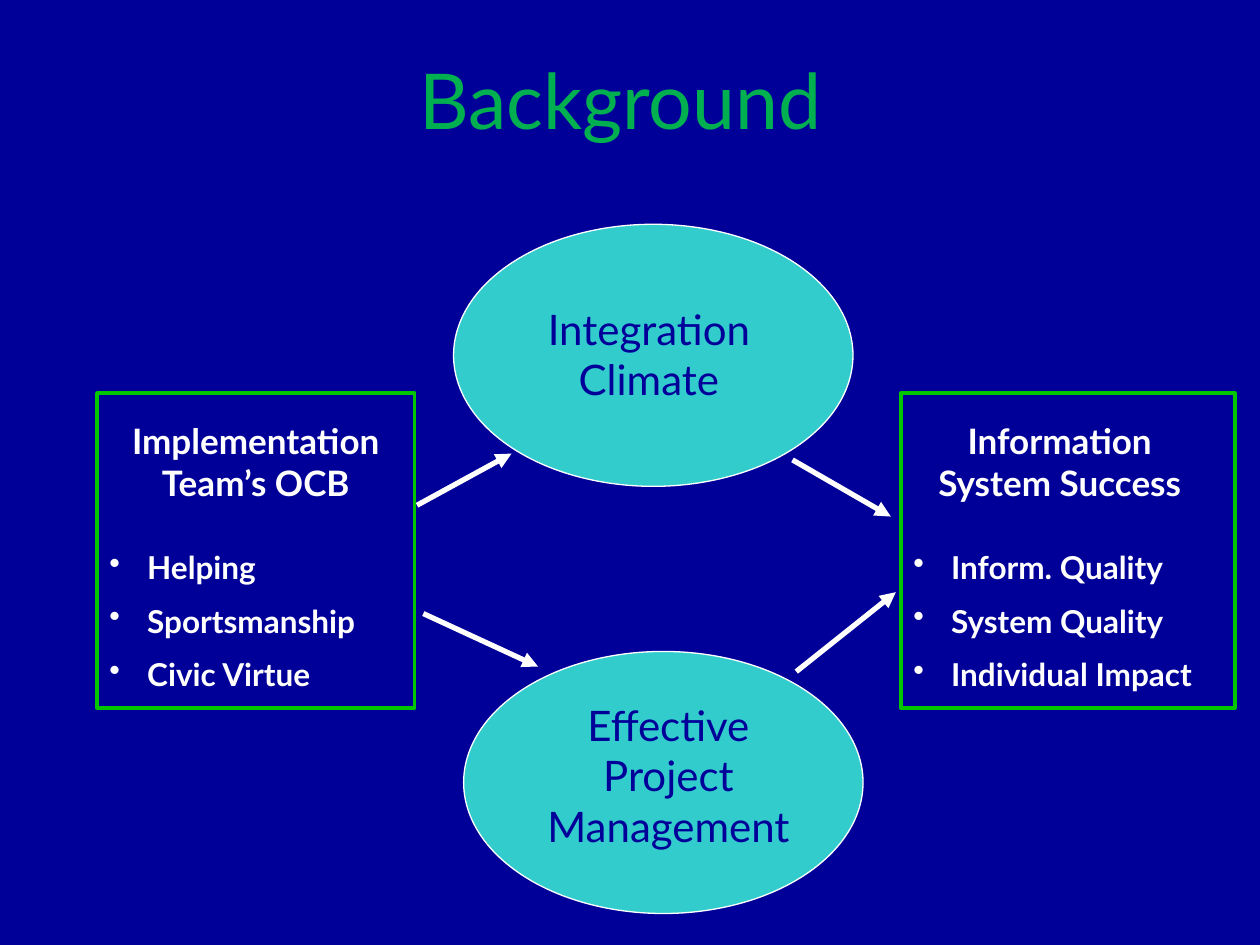
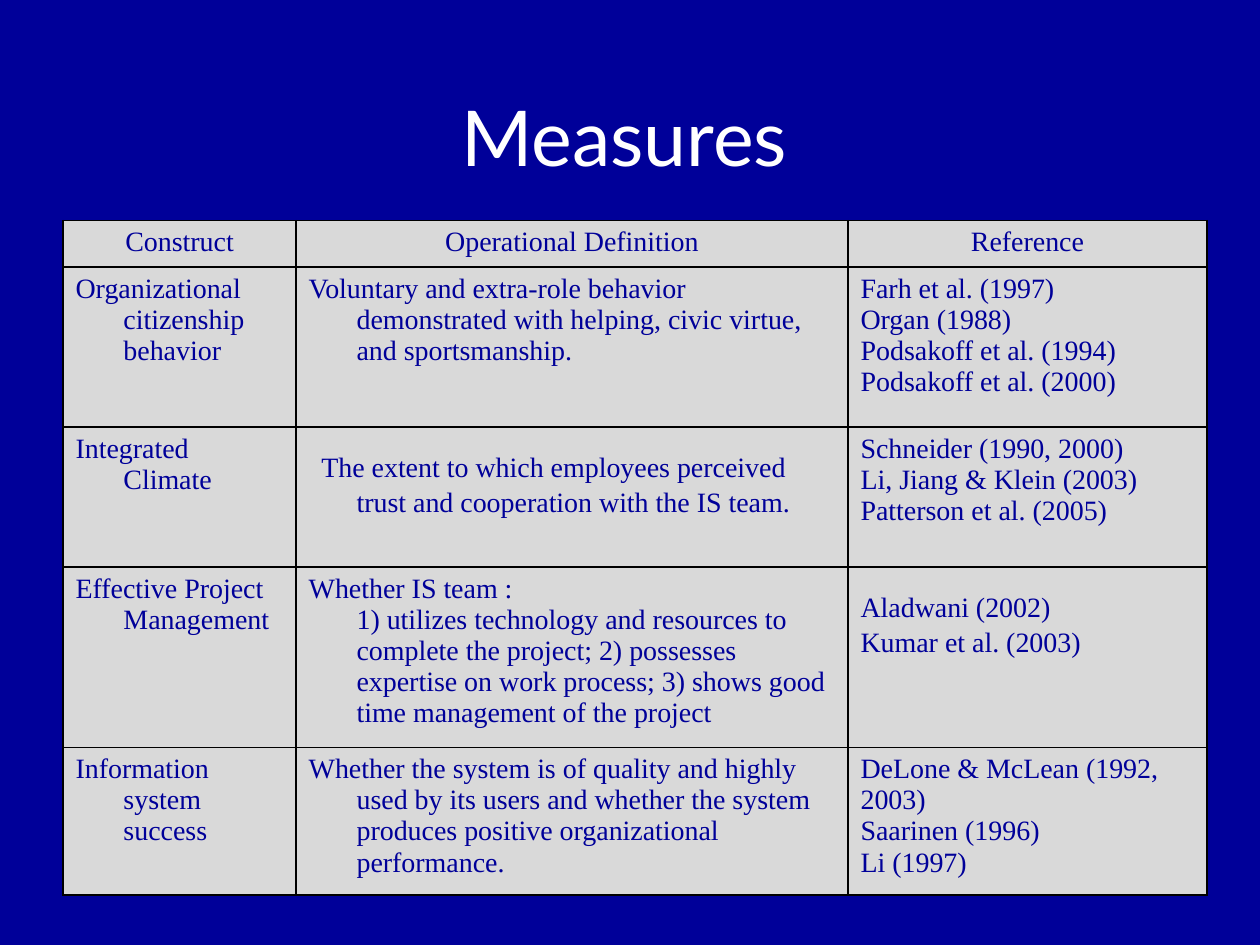
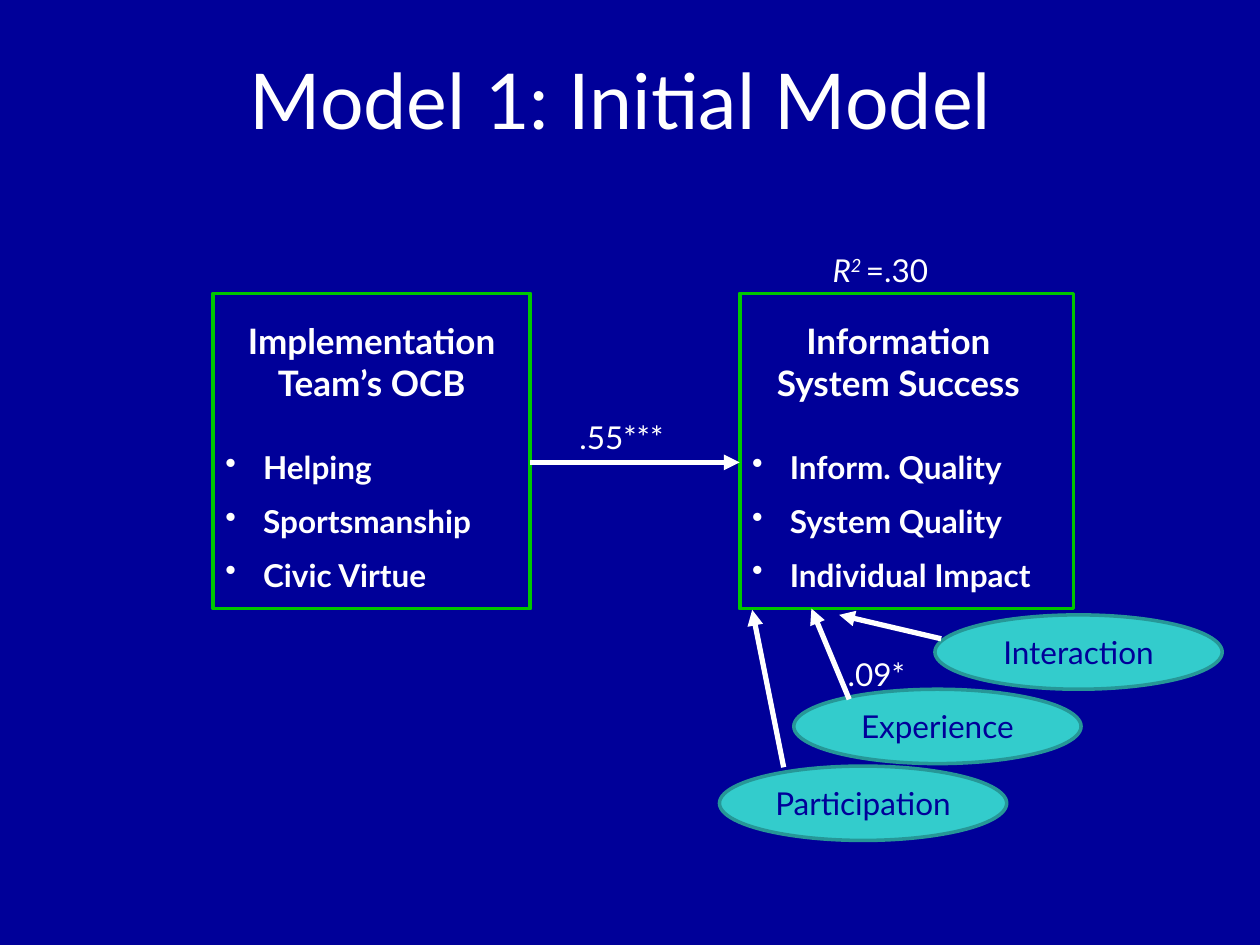
"""Build three slides on team citizenship behavior and system success."""
from lxml.etree import SubElement as Sub
from pptx import Presentation
from pptx.dml.color import RGBColor as RGB
from pptx.enum.shapes import MSO_CONNECTOR as Link, MSO_SHAPE as Kind
from pptx.enum.text import MSO_ANCHOR as Anchor, PP_ALIGN as Align
from pptx.oxml.ns import qn
from pptx.util import Inches, Pt


class Theme:
    navy = RGB.from_string("000099")
    white = RGB.from_string("FFFFFF")
    black = RGB.from_string("000000")
    green = RGB.from_string("00B050")
    lime = RGB.from_string("00C600")
    aqua = RGB.from_string("33CCCC")
    teal = RGB.from_string("269797")
    gray = RGB.from_string("D9D9D9")
    sans, serif = "Lato", "Times New Roman"
    title, large, head, body, cell = 44, 24, 20, 18, 16


def write(frame, lines, size, color=Theme.white, face=Theme.sans, align=Align.LEFT,
          bold=False, left=0, first=0, bullet=None, gap=0):
    frame.word_wrap = True
    for n, line in enumerate(lines):
        para = frame.add_paragraph() if n else frame.paragraphs[0]
        para.text = line
        para.alignment = align
        props = para._p.get_or_add_pPr()
        props.set("marL", str(Inches(left)))
        props.set("indent", str(Inches(first)))
        if bullet:
            Sub(props, qn("a:buChar"), char=bullet)
        if n and gap:
            para.space_before = Pt(gap)
        font = para.font
        font.name, font.size, font.bold = face, Pt(size), bold
        font.color.rgb = color


def put(page, at, kind=None, fill=None, line=None, width=1):
    place = [Inches(v) for v in at]
    if kind is None:
        return page.shapes.add_textbox(*place).text_frame
    shape = page.shapes.add_shape(kind, *place)
    shape.shadow.inherit = False
    if fill is None:
        shape.fill.background()
    else:
        shape.fill.solid()
        shape.fill.fore_color.rgb = fill
    shape.line.color.rgb = line
    shape.line.width = Pt(width)
    return shape.text_frame


deck = Presentation()
deck.slide_width, deck.slide_height = Inches(10), Inches(7.5)

pages = []
for title, color, at in (
    ("Background", Theme.green, (0.83, 0, 8.19, 1.57)),
    ("Measures", Theme.white, (0.5, 0.32, 8.91, 1.51)),
    ("Model 1: Initial Model", Theme.white, (0.83, 0, 8.19, 1.57)),
):
    page = deck.slides.add_slide(deck.slide_layouts[6])
    page.background.fill.solid()
    page.background.fill.fore_color.rgb = Theme.navy
    frame = put(page, at)
    frame.vertical_anchor = Anchor.MIDDLE
    write(frame, [title], Theme.title, color, align=Align.CENTER)
    pages.append(page)
intro, grid, model = pages

team = ("Implementation Team’s OCB", 2.52, ["Helping", "Sportsmanship", "Civic Virtue"])
gain = ("Information System Success", 2.65,
        ["Inform. Quality", "System Quality", "Individual Impact"])
for page, x, y, (head, wide, items) in (
    (intro, 0.77, 3.12, team), (intro, 7.15, 3.12, gain),
    (model, 1.69, 2.33, team), (model, 5.87, 2.33, gain),
):
    put(page, (x, y, wide, 2.5), Kind.RECTANGLE, line=Theme.lime, width=2.25)
    write(put(page, (x, y + 0.16, 2.52, 0.77)), [head], Theme.head,
          align=Align.CENTER, bold=True)
    write(put(page, (x, y + 1.18, wide, 1.31)), items, Theme.body,
          bold=True, left=0.3, first=-0.3, bullet="•", gap=9)

for label, x, y, at in (
    ("Integration Climate", 3.6, 1.78, (3.9, 2.36, 2.5, 0.91)),
    ("Effective Project Management", 3.68, 5.17, (4.18, 5.5, 2.25, 1.31)),
):
    put(intro, (x, y, 3.17, 2.08), Kind.OVAL, Theme.aqua, Theme.white, 0.75)
    write(put(intro, at), [label], Theme.large, Theme.navy, align=Align.CENTER)

for label, x, y in (
    ("Experience", 6.3, 5.47), ("Participation", 5.71, 6.08), ("Interaction", 7.42, 4.88),
):
    frame = put(model, (x, y, 2.28, 0.59), Kind.OVAL, Theme.aqua, Theme.teal, 2)
    frame.vertical_anchor = Anchor.MIDDLE
    write(frame, [label], Theme.body, Theme.navy, align=Align.CENTER)

for page, *ends in (
    (intro, 3.31, 4.01, 4.06, 3.6), (intro, 6.32, 5.33, 7.11, 4.7),
    (intro, 3.36, 4.87, 4.27, 5.29), (intro, 6.29, 3.65, 7.07, 4.1),
    (model, 4.21, 3.67, 5.87, 3.67), (model, 7.47, 5.07, 6.66, 4.88),
    (model, 6.74, 5.55, 6.44, 4.83), (model, 6.22, 6.09, 5.97, 4.84),
):
    arrow = page.shapes.add_connector(Link.STRAIGHT, *[Inches(v) for v in ends])
    arrow.line.color.rgb = Theme.white
    arrow.line.width = Pt(3)
    Sub(arrow.line._get_or_add_ln(), qn("a:tailEnd"), type="triangle")
    Sub(arrow._element.spPr, qn("a:effectLst"))

for label, x, y in ((".55***", 4.5, 3.27), (".09*", 6.63, 5.15)):
    write(put(model, (x, y, 1.24, 0.4)), [label], Theme.body)

frame = put(model, (6.51, 1.94, 1.24, 0.4))
write(frame, ["R"], Theme.body)
para = frame.paragraphs[0]
power, value = para.add_run(), para.add_run()
power.text, value.text = "2 ", "=.30"
para.runs[0].font.italic = power.font.italic = True
power.font._element.set("baseline", "30000")

rows = (
    (["Construct"], ["Operational Definition"], ["Reference"]),
    (["Organizational citizenship behavior"],
     ["Voluntary and extra-role behavior demonstrated with helping, civic virtue, "
      "and sportsmanship."],
     ["Farh et al. (1997)", "Organ (1988)", "Podsakoff et al. (1994)",
      "Podsakoff et al. (2000)"]),
    (["Integrated Climate"],
     ["The extent to which employees perceived trust and cooperation with the IS team."],
     ["Schneider (1990, 2000)", "Li, Jiang & Klein (2003)", "Patterson et al. (2005)"]),
    (["Effective Project Management"],
     ["Whether IS team :\v1) utilizes technology and resources to complete the project; "
      "2) possesses expertise on work process; 3) shows good time management of the project"],
     ["Aladwani (2002)", "Kumar et al. (2003)"]),
    (["Information system success"],
     ["Whether the system is of quality and highly used by its users and whether the "
      "system produces positive organizational performance."],
     ["DeLone & McLean (1992, 2003)", "Saarinen (1996)", "Li (1997)"]),
)
place = [Inches(v) for v in (0.5, 1.75, 9.08, 5.35)]
table = grid.shapes.add_table(len(rows), 3, *place).table
for col, wide in zip(table.columns, (1.85, 4.38, 2.85)):
    col.width = Inches(wide)
for row, tall in zip(table.rows, (0.37, 1.27, 1.11, 1.43, 1.17)):
    row.height = Inches(tall)
for r, row in enumerate(rows):
    for c, lines in enumerate(row):
        cell = table.cell(r, c)
        props = cell._tc.get_or_add_tcPr()
        for side in ("L", "R", "T", "B"):
            edge = Sub(props, qn("a:ln" + side), w=str(Pt(1)))
            Sub(Sub(edge, qn("a:solidFill")), qn("a:srgbClr"), val=str(Theme.black))
        cell.fill.solid()
        cell.fill.fore_color.rgb = Theme.gray
        left = 0 if (r, c) == (4, 2) else 0.38
        first = -0.28 if (r, c) == (2, 1) else -left
        write(cell.text_frame, lines, Theme.cell, Theme.navy, Theme.serif,
              Align.LEFT if r else Align.CENTER, left=left, first=first)
        if (r, c) in ((2, 1), (3, 2)):
            cell.margin_top = Inches(0.17)
            for para in cell.text_frame.paragraphs:
                para.line_spacing = Pt(20)

deck.save("out.pptx")
